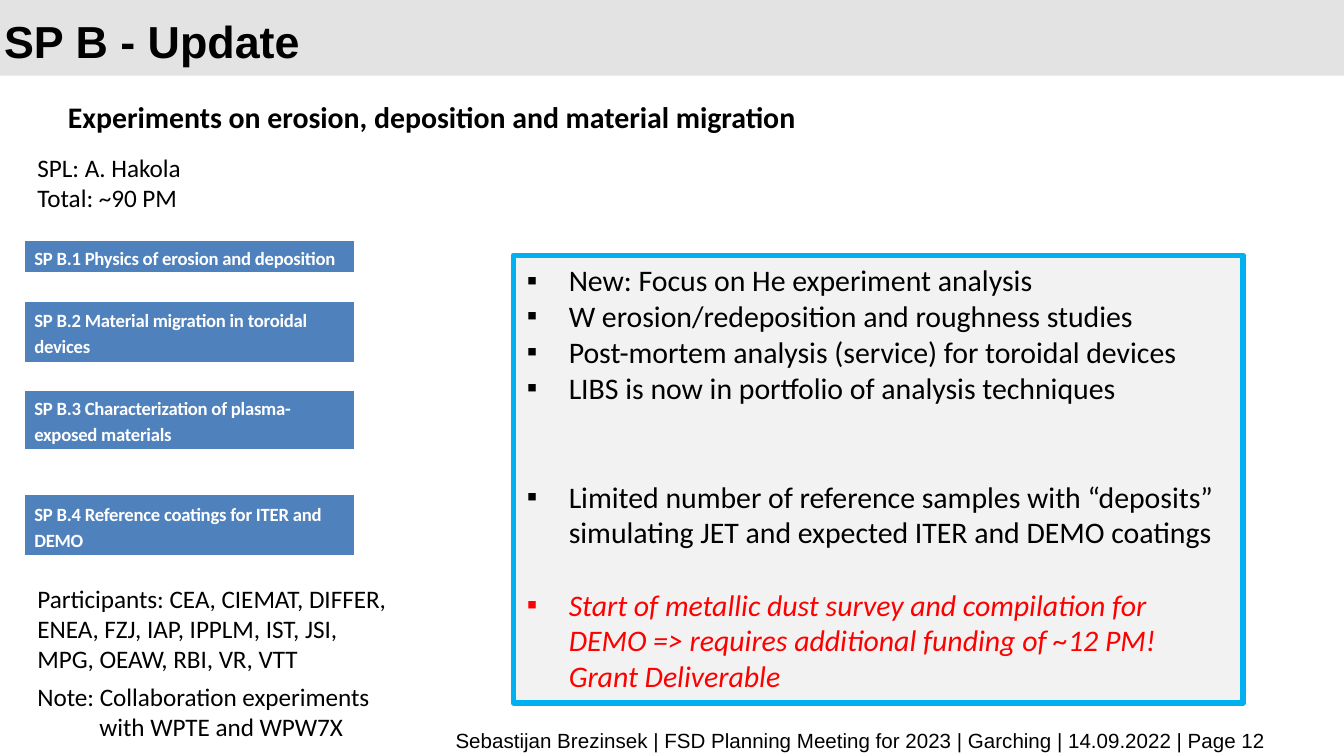
from dataclasses import dataclass
from lxml.etree import SubElement as Sub
from pptx import Presentation
from pptx.dml.color import RGBColor as RGB
from pptx.enum.shapes import MSO_SHAPE as Shape
from pptx.enum.text import MSO_ANCHOR as Anchor, MSO_AUTO_SIZE as Fit, PP_ALIGN as Align
from pptx.oxml.ns import qn
from pptx.util import Pt


@dataclass(frozen=True)
class Theme:
    head: str = "Arial"
    body: str = "Calibri"
    black: RGB = RGB(0, 0, 0)
    white: RGB = RGB(255, 255, 255)
    red: RGB = RGB(255, 0, 0)
    band: RGB = RGB(0xE3, 0xE3, 0xE3)
    blue: RGB = RGB(0x4F, 0x81, 0xBD)
    cyan: RGB = RGB(0, 0xB0, 0xF0)
    pale: RGB = RGB(0xF2, 0xF2, 0xF2)
    title: float = 24
    text: float = 16
    side: float = 13.5
    foot: float = 11
    label: float = 10


T = Theme()
LINE = 19.5  # height of one line of panel text
STEP = 22.5  # hanging indent of the panel list

TASKS = [  # top, height, label
    (0, 18, "SP B.1 Physics of erosion and deposition"),
    (32.4, 33.8, "SP B.2 Material migration in toroidal devices"),
    (79.9, 33.1, "SP B.3 Characterization of plasma-exposed materials"),
    (136.1, 33.8, "SP B.4 Reference coatings for ITER and DEMO"),
]
POINTS = [  # gap before, text
    (0, "New: Focus on He experiment analysis"),
    (0, "W erosion/redeposition and roughness studies"),
    (0, "Post-mortem analysis (service) for toroidal devices"),
    (0, "LIBS is now in portfolio of analysis techniques"),
    (2 * LINE, "Limited number of reference samples with “deposits” "
               "simulating JET and expected ITER and DEMO coatings"),
    (LINE, "Start of metallic dust survey and compilation for DEMO "
           "=> requires additional funding of ~12 PM!"),
    (0, "Grant Deliverable"),
]


def style(para, size, face=T.body, color=T.black, bold=False, italic=False):
    for run in para.runs:
        font = run.font
        font.size, font.name = Pt(size), face
        font.bold, font.italic = bold, italic
        font.color.rgb = color


def indent(para, left, hang=0, mark=None):
    props = para._p.get_or_add_pPr()
    props.set("marL", str(Pt(left)))
    props.set("indent", str(-Pt(hang)))
    if mark:
        Sub(props, qn("a:buFont")).set("typeface", T.head)
        Sub(props, qn("a:buChar")).set("char", mark)
    else:
        Sub(props, qn("a:buNone"))


def place(shape, box):
    shape.left, shape.top, shape.width, shape.height = map(Pt, box)


def write(slide, box, text, size, face=T.body, bold=False):
    """Add a wrapped text box and return its paragraphs."""
    frame = slide.shapes.add_textbox(*map(Pt, box)).text_frame
    frame.word_wrap = True
    frame.text = text
    for para in frame.paragraphs:
        style(para, size, face, bold=bold)
    return frame.paragraphs


def header(slide, box):
    x, y, w, h = box
    band = slide.shapes.add_shape(Shape.RECTANGLE, *map(Pt, box))
    band.shadow.inherit = False
    band.fill.solid()
    band.fill.fore_color.rgb = T.band
    band.line.fill.background()
    slide.shapes._spTree.insert(2, band._element)  # behind the title
    title = slide.shapes.title
    place(title, (x - 5, y + 6.5, 594, 27.4))
    frame = title.text_frame
    frame.text = "SP B - Update"
    frame.auto_size, frame.vertical_anchor = Fit.NONE, Anchor.MIDDLE
    para = frame.paragraphs[0]
    para.alignment, para.line_spacing = Align.LEFT, Pt(32)
    style(para, T.title, T.head, bold=True)


def label(slide, box, text):
    """Add a task label as a table of one cell with white borders."""
    x, y, w, h = map(Pt, box)
    table = slide.shapes.add_table(1, 1, x, y, w, h).table
    table.first_row = table.horz_banding = False
    cell = table.cell(0, 0)
    props = cell._tc.get_or_add_tcPr()
    for side, width in zip("LRTB", (1, 1, 1, 3)):
        edge = Sub(props, qn(f"a:ln{side}"), w=str(Pt(width)))
        fill = Sub(edge, qn("a:solidFill"))
        Sub(fill, qn("a:srgbClr"), val=str(T.white))
    cell.fill.solid()
    cell.fill.fore_color.rgb = T.blue
    cell.vertical_anchor = Anchor.MIDDLE
    cell.margin_left = cell.margin_right = Pt(5.4)
    cell.margin_top = cell.margin_bottom = 0
    cell.text_frame.text = text
    para = cell.text_frame.paragraphs[0]
    para.line_spacing = 1.15
    para.space_after = Pt(2.4)
    style(para, T.label, color=T.white, bold=True)
    para.runs[0]._r.get_or_add_rPr().set("spc", "-10")


def sidebar(slide, box):
    x, y, w, h = box
    write(slide, (x, y, 174, 40), "SPL: A. Hakola\nTotal: ~90 PM", T.side)
    for top, high, text in TASKS:
        label(slide, (x, y + 51.1 + top, 177, high), text)
    write(slide, (x, y + 231, w, 56),
          "Participants: CEA, CIEMAT, DIFFER, ENEA, FZJ, IAP, IPPLM, IST, JSI, "
          "MPG, OEAW, RBI, VR, VTT", T.side)
    note = write(slide, (x, y + 283.7, w, 41),
                 "Note: Collaboration experiments\nwith WPTE and WPW7X", T.side)
    indent(note[1], 33.2)


def panel(slide, box):
    body = slide.placeholders[1]
    place(body, box)
    body.fill.solid()
    body.fill.fore_color.rgb = T.pale
    body.line.color.rgb, body.line.width = T.cyan, Pt(3)
    frame = body.text_frame
    frame.auto_size, frame.vertical_anchor = Fit.NONE, Anchor.TOP
    frame.text = "\n".join(text for _, text in POINTS)
    for i, (para, (gap, _)) in enumerate(zip(frame.paragraphs, POINTS)):
        hot = i >= len(POINTS) - 2
        last = i == len(POINTS) - 1
        indent(para, STEP, 0 if last else STEP, None if last else "▪")
        para.space_before = Pt(gap)
        style(para, T.text, color=T.red if hot else T.black, italic=hot)


def main():
    deck = Presentation()
    deck.slide_width, deck.slide_height = Pt(720), Pt(405)
    slide = deck.slides.add_slide(deck.slide_layouts[1])
    header(slide, (0, 0, 720, 40.5))
    topic = write(slide, (29.3, 48.2, 688, 80.6),
                  "Experiments on erosion, deposition and material migration",
                  T.text, bold=True)[0]
    topic.alignment, topic.line_spacing = Align.JUSTIFY, 1.05
    topic.space_after = Pt(6)
    sidebar(slide, (13, 77.8, 205, 325))
    panel(slide, (275, 136.8, 391, 239.8))
    foot = write(slide, (36.7, 386.6, 648.7, 16),
                 "Sebastijan Brezinsek | FSD Planning Meeting for 2023 | Garching "
                 "| 14.09.2022 | Page 12", T.foot, T.head)[0]
    foot.alignment = Align.RIGHT
    deck.save("out.pptx")


if __name__ == "__main__":
    main()
